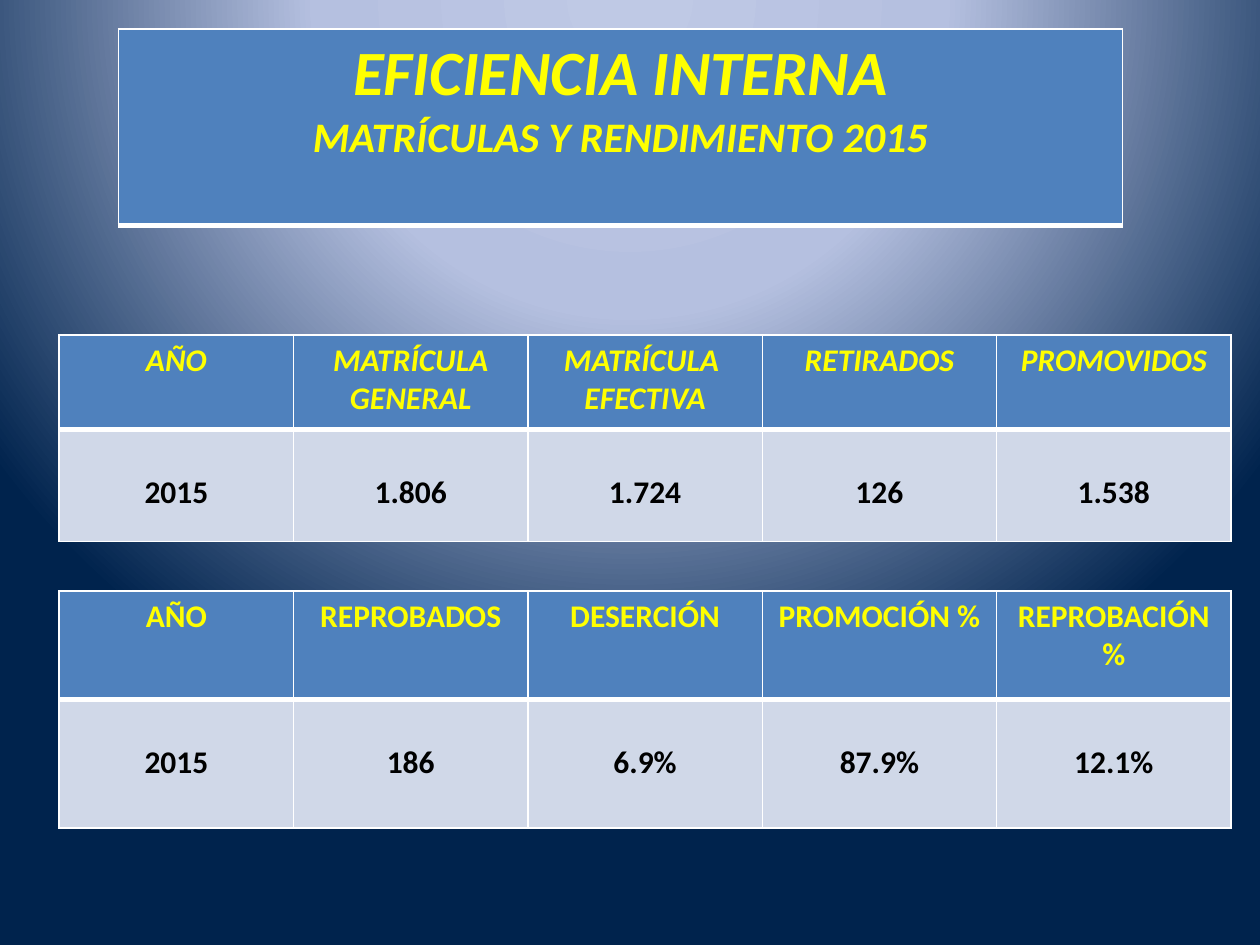
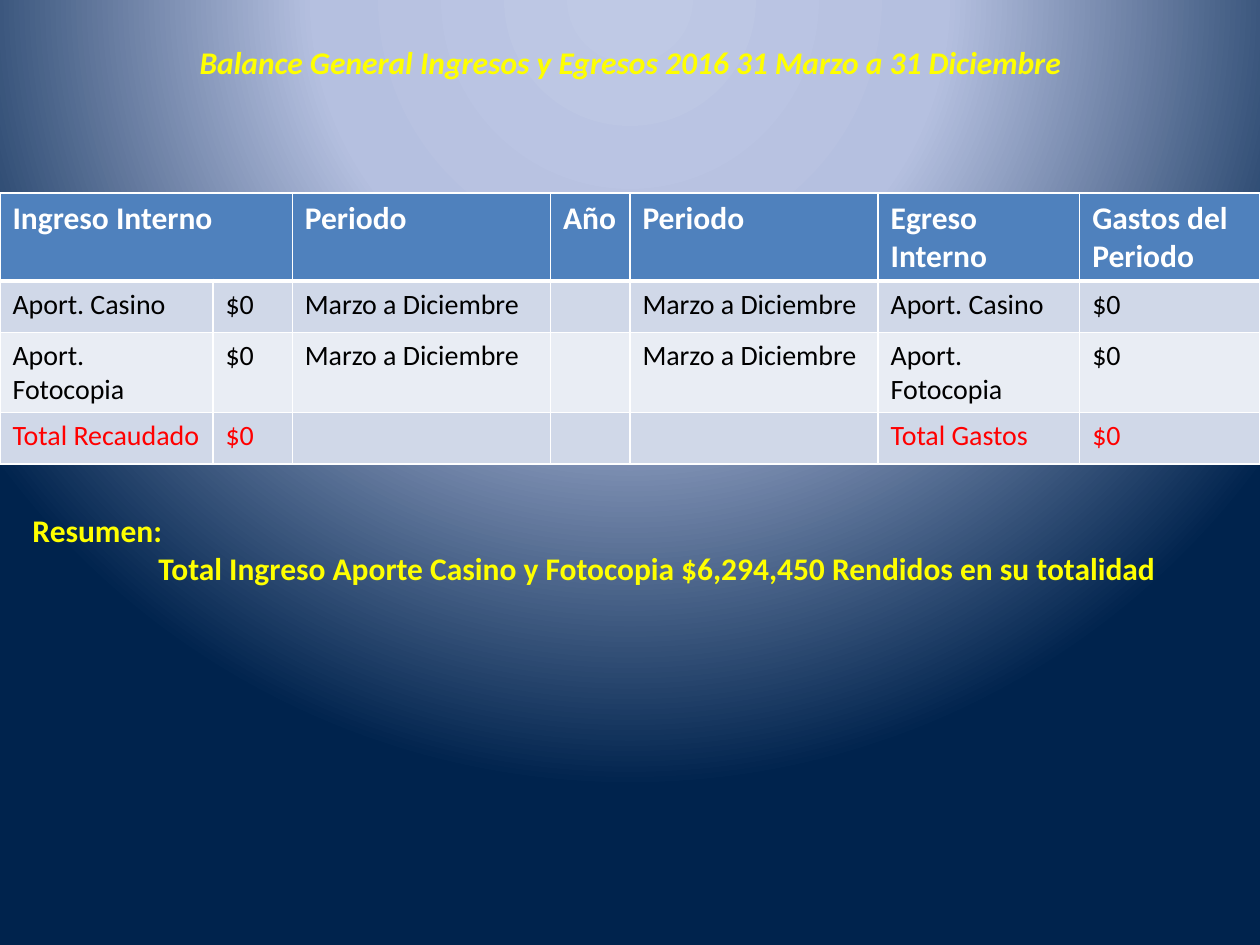
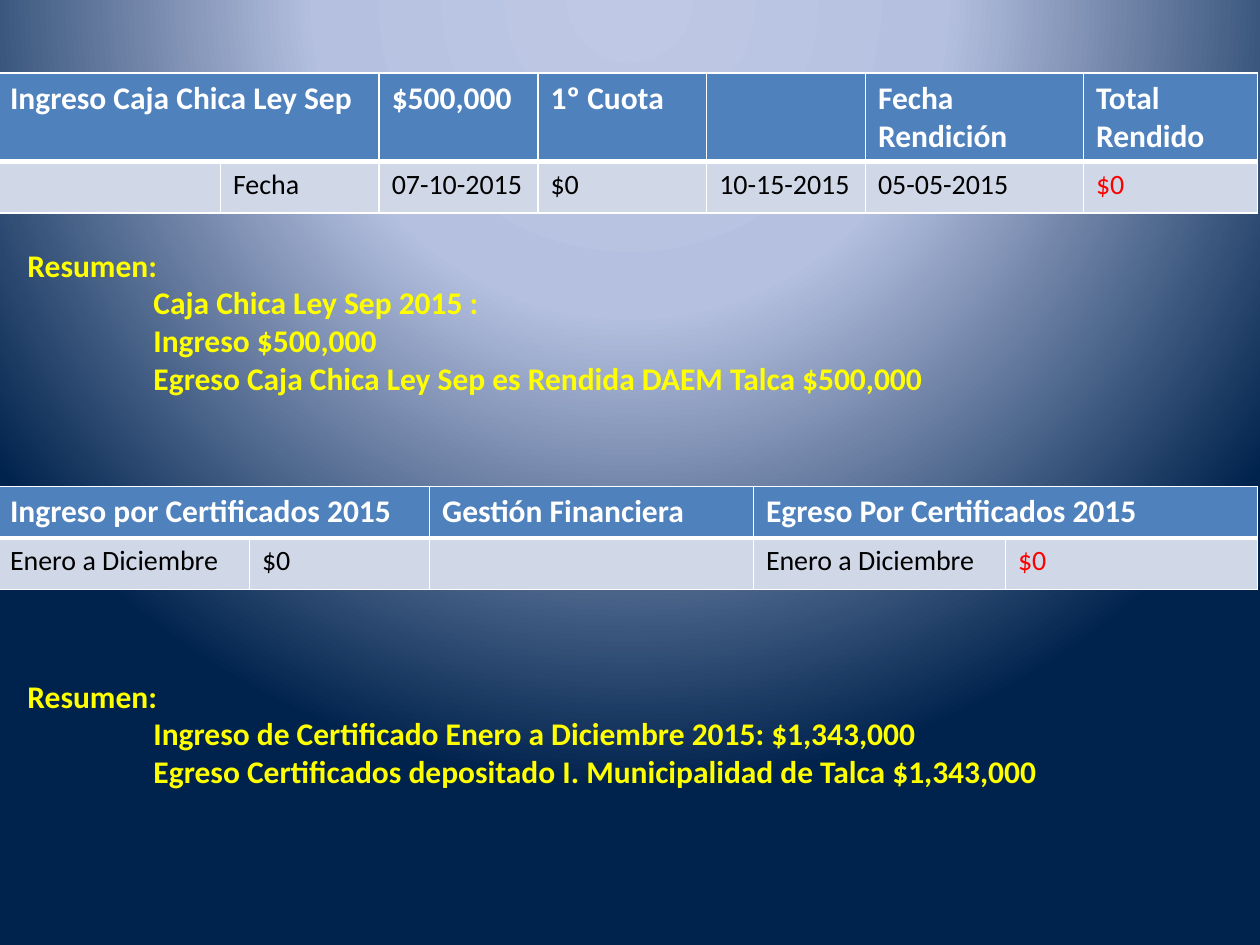
from dataclasses import dataclass, replace

from lxml.etree import SubElement
from pptx import Presentation
from pptx.dml.color import RGBColor
from pptx.enum.text import MSO_AUTO_SIZE, PP_ALIGN
from pptx.oxml import parse_xml
from pptx.oxml.ns import nsdecls, qn
from pptx.util import Inches, Pt


@dataclass(frozen=True)
class TextStyle:
    size: int
    color: str
    bold: bool = True
    italic: bool = False
    align: PP_ALIGN = PP_ALIGN.LEFT


class Theme:
    font = "Calibri"
    yellow, white, black, red = "FFFF00", "FFFFFF", "000000", "FF0000"
    header_fill = "4F81BD"
    band_fills = ("D0D8E8", "E9EDF4")
    background_stops = ((0, "BFC9E5"), (40, "B5C0E0"), (100, "00234D"))
    thin_line, thick_line = 1, 3

    banner = TextStyle(36, yellow, italic=True, align=PP_ALIGN.CENTER)
    banner_subtitle = replace(banner, size=24)
    heading = replace(banner, size=18)
    upright_heading = replace(heading, italic=False)
    figure = replace(upright_heading, color=black)
    column_title = TextStyle(18, white)
    entry = TextStyle(16, black, bold=False)
    summary = TextStyle(18, yellow)


class Deck:
    """Holds the theme, the presentation and the slide being built."""

    def __init__(self, theme):
        self.theme = theme
        self.presentation = Presentation()
        self.presentation.slide_width = Inches(10)
        self.presentation.slide_height = Inches(7.5)
        self.slide = None
        self.paint_background()

    def paint_background(self):
        """Give the master a circular gradient centred above the slide."""
        master = self.presentation.slide_master
        master.background.fill.solid()
        solid = master.element.find(".//" + qn("p:bgPr")).find(qn("a:solidFill"))
        stops = "".join(
            f'<a:gs pos="{position * 1000}"><a:srgbClr val="{color}"/></a:gs>'
            for position, color in self.theme.background_stops
        )
        gradient = parse_xml(
            f'<a:gradFill {nsdecls("a")} rotWithShape="1"><a:gsLst>{stops}</a:gsLst>'
            '<a:path path="circle">'
            '<a:fillToRect l="50000" t="-80000" r="50000" b="180000"/>'
            "</a:path></a:gradFill>"
        )
        solid.getparent().replace(solid, gradient)

    def add_slide(self):
        blank_layout = self.presentation.slide_layouts[6]
        self.slide = self.presentation.slides.add_slide(blank_layout)

    def set_text(self, text_frame, text, *styles):
        """Set one paragraph per line; the last style serves all further lines."""
        text_frame.text = text
        for index, paragraph in enumerate(text_frame.paragraphs):
            style = styles[min(index, len(styles) - 1)]
            paragraph.alignment = style.align
            for run in paragraph.runs:
                run.font.name = self.theme.font
                run.font.size = Pt(style.size)
                run.font.bold = style.bold
                run.font.italic = style.italic
                run.font.color.rgb = RGBColor.from_string(style.color)

    def add_text(self, left, top, width, height, text, style):
        box = self.slide.shapes.add_textbox(
            Inches(left), Inches(top), Inches(width), Inches(height)
        )
        box.text_frame.word_wrap = True
        box.text_frame.auto_size = MSO_AUTO_SIZE.SHAPE_TO_FIT_TEXT
        self.set_text(box.text_frame, text, style)
        return box

    def add_summary(self, left, top, width, height, *lines):
        """Add a "Resumen:" heading with indented lines below it."""
        text = "\n".join(("Resumen:",) + lines)
        box = self.add_text(left, top, width, height, text, self.theme.summary)
        for paragraph in box.text_frame.paragraphs[1:]:
            paragraph._p.get_or_add_pPr().set("marL", str(Inches(1)))

    def set_borders(self, cell, row):
        """Draw thin white borders, thick between the header and the body."""
        properties = cell._tc.get_or_add_tcPr()
        thick_side = {0: "lnB", 1: "lnT"}.get(row)
        for index, side in enumerate(("lnL", "lnR", "lnT", "lnB")):
            width = self.theme.thick_line if side == thick_side else self.theme.thin_line
            line = properties.makeelement(qn(f"a:{side}"), {"w": str(Pt(width))})
            fill = SubElement(line, qn("a:solidFill"))
            SubElement(fill, qn("a:srgbClr"), val=self.theme.white)
            properties.insert(index, line)

    def add_table(self, left, top, columns, heights, rows, header_styles,
                  body_style=None, body_margin=0.05, red_cells=()):
        """Add a table; None in a row joins that cell to the one on its left."""
        table = self.slide.shapes.add_table(
            len(rows), len(columns), Inches(left), Inches(top),
            Inches(sum(columns)), Inches(sum(heights)),
        ).table
        table.horz_banding = False
        for column, width in zip(table.columns, columns):
            column.width = Inches(width)
        for row, height in zip(table.rows, heights):
            row.height = Inches(height)
        for row_index, row in enumerate(rows):
            for column_index, text in enumerate(row):
                cell = table.cell(row_index, column_index)
                if row_index == 0:
                    fill, styles = self.theme.header_fill, header_styles
                else:
                    fill = self.theme.band_fills[(row_index - 1) % 2]
                    styles = (body_style,)
                    cell.margin_top = Inches(body_margin)
                    if (row_index, column_index) in red_cells:
                        styles = (replace(body_style, color=self.theme.red),)
                cell.fill.solid()
                cell.fill.fore_color.rgb = RGBColor.from_string(fill)
                self.set_borders(cell, row_index)
                if text is None:
                    table.cell(row_index, column_index - 1).merge(cell)
                elif text:
                    self.set_text(cell.text_frame, text, *styles)

    def add_figures(self, top, heights, rows, header_style):
        """Add a five-column table of yearly figures set low in their cells."""
        self.add_table(0.47, top, [1.86] * 5, heights, rows, (header_style,),
                       self.theme.figure, body_margin=0.35)

    def add_ledger(self, left, top, columns, heights, rows, red_cells):
        self.add_table(left, top, columns, heights, rows, (self.theme.column_title,),
                       self.theme.entry, red_cells=red_cells)


def build_efficiency(deck):
    theme = deck.theme
    deck.add_slide()
    deck.add_figures(2.66, [0.75, 0.89], [
        ["AÑO", "MATRÍCULA\nGENERAL", "MATRÍCULA \nEFECTIVA", "RETIRADOS", "PROMOVIDOS"],
        ["2015", "1.806", "1.724", "126", "1.538"],
    ], theme.heading)
    deck.add_table(0.94, 0.23, [7.97], [1.56],
                   [["EFICIENCIA INTERNA\nMATRÍCULAS Y RENDIMIENTO 2015"]],
                   (theme.banner, theme.banner_subtitle))
    deck.add_figures(4.69, [0.86, 1.02], [
        ["AÑO", "REPROBADOS", "DESERCIÓN", "PROMOCIÓN %", "REPROBACIÓN%"],
        ["2015", "186", "6.9%", "87.9%", "12.1%"],
    ], theme.upright_heading)


def build_balance(deck):
    months = "Marzo a Diciembre"
    deck.add_slide()
    deck.add_text(0.2, 0.29, 9.61, 0.4,
                  "Balance General Ingresos y Egresos 2016 31 Marzo a 31 Diciembre",
                  deck.theme.heading)
    deck.add_ledger(
        0, 1.53, [1.69, 0.63, 2.05, 0.63, 1.97, 1.6, 1.43], [0.7, 0.41, 0.62, 0.41],
        [
            ["Ingreso Interno", None, "Periodo", "Año", "Periodo",
             "Egreso Interno", "Gastos del Periodo"],
            ["Aport. Casino", "$0", months, "", months, "Aport. Casino", "$0"],
            ["Aport. Fotocopia", "$0", months, "", months, "Aport.\nFotocopia", "$0"],
            ["Total Recaudado", "$0", "", "", "", "Total Gastos", "$0"],
        ],
        red_cells=[(3, column) for column in range(7)],
    )
    deck.add_summary(
        0.16, 4.01, 9.64, 0.71,
        "Total Ingreso Aporte Casino y Fotocopia $6,294,450 Rendidos en su totalidad",
    )


def build_petty_cash(deck):
    deck.add_slide()
    deck.add_ledger(
        -0.02, 0.58, [1.77, 1.26, 1.26, 1.34, 1.26, 1.73, 1.38], [0.7, 0.41],
        [
            ["Ingreso Caja Chica Ley Sep", None, "$500,000", "1º Cuota", "",
             "Fecha Rendición", "Total Rendido"],
            ["", "Fecha", "07-10-2015", "$0", "10-15-2015", "05-05-2015", "$0"],
        ],
        red_cells=[(1, 6)],
    )
    deck.add_summary(
        0.12, 1.9, 10, 1.31,
        "Caja Chica Ley Sep 2015 :",
        "Ingreso $500,000",
        "Egreso Caja Chica Ley Sep es Rendida DAEM Talca $500,000",
    )
    deck.add_ledger(
        -0.02, 3.86, [2, 1.43, 2.57, 2, 2], [0.41, 0.41],
        [
            ["Ingreso por Certificados 2015", None, "Gestión Financiera",
             "Egreso Por Certificados 2015", None],
            ["Enero a Diciembre", "$0", "", "Enero a Diciembre", "$0"],
        ],
        red_cells=[(1, 4)],
    )
    deck.add_summary(
        0.12, 5.32, 10, 1.01,
        "Ingreso de Certificado Enero a Diciembre 2015: $1,343,000",
        "Egreso Certificados depositado I. Municipalidad de Talca $1,343,000",
    )


def main():
    deck = Deck(Theme())
    build_efficiency(deck)
    build_balance(deck)
    build_petty_cash(deck)
    deck.presentation.save("out.pptx")


if __name__ == "__main__":
    main()
